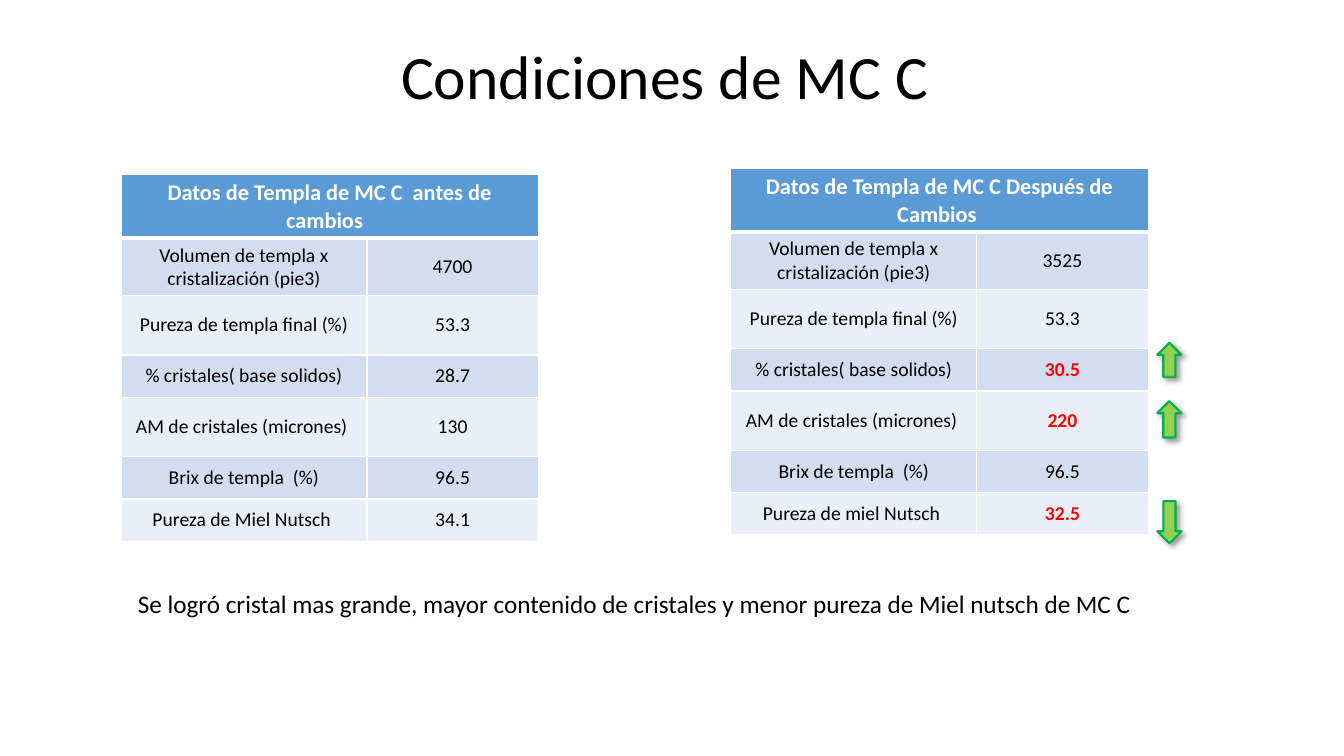
from lxml.etree import SubElement
from pptx import Presentation
from pptx.dml.color import RGBColor
from pptx.enum.shapes import MSO_SHAPE as SHAPE
from pptx.enum.text import MSO_ANCHOR as ANCHOR, PP_ALIGN as ALIGN
from pptx.oxml import parse_xml
from pptx.oxml.ns import nsdecls, qn
from pptx.util import Pt

WHITE = RGBColor(0xFF, 0xFF, 0xFF)
BLACK = RGBColor(0x00, 0x00, 0x00)
RED = RGBColor(0xFF, 0x00, 0x00)
HEADER_BLUE = RGBColor(0x5B, 0x9B, 0xD5)
BAND_DARK = RGBColor(0xD2, 0xDE, 0xEF)
BAND_LIGHT = RGBColor(0xEA, 0xEF, 0xF7)
ARROW_FILL = RGBColor(0x92, 0xD0, 0x50)
ARROW_LINE = RGBColor(0x00, 0xB0, 0x50)

COL_WIDTHS = (175.7, 122.4)
ROW_HEIGHTS = (30.2, 30.2, 42.5, 30.2, 42.5, 30.2, 30.2)
UP, DOWN = 270, 90

BEFORE = [
    ("Volumen de templa x cristalización (pie3)", "4700"),
    ("Pureza de templa final (%)", "53.3"),
    ("% cristales( base solidos)", "28.7"),
    ("AM de cristales (micrones) ", "130"),
    ("Brix de templa  (%)", "96.5"),
    ("Pureza de Miel Nutsch ", "34.1"),
]
AFTER = [
    ("Volumen de templa x cristalización (pie3)", "3525"),
    ("Pureza de templa final (%)", "53.3"),
    ("% cristales( base solidos)", "30.5"),
    ("AM de cristales (micrones) ", "220"),
    ("Brix de templa  (%)", "96.5"),
    ("Pureza de miel Nutsch ", "32.5"),
]
CHANGED = {"30.5", "220", "32.5"}


def write(tf, text, size, color=BLACK, bold=False, align=ALIGN.LEFT):
    p = tf.paragraphs[0]
    p.alignment = align
    r = p.add_run()
    r.text = text
    for name, value in {"name": "Calibri", "size": Pt(size), "bold": bold}.items():
        setattr(r.font, name, value)
    r.font.color.rgb = color
    return p


def add_text(s, box, text, size, align=ALIGN.LEFT, anchor=ANCHOR.TOP):
    tf = s.shapes.add_textbox(*map(Pt, box)).text_frame
    tf.word_wrap = True
    tf.vertical_anchor = anchor
    return write(tf, text, size, align=align)


def style_cell(cell, fill, top=1, bottom=1):
    # Borders come before the fill in the cell properties
    tc_pr = cell._tc.get_or_add_tcPr()
    for side, width in {"L": 1, "R": 1, "T": top, "B": bottom}.items():
        ln = SubElement(tc_pr, qn(f"a:ln{side}"), w=str(Pt(width)))
        solid = SubElement(ln, qn("a:solidFill"))
        SubElement(solid, qn("a:srgbClr"), val=str(WHITE))
    cell.fill.solid()
    cell.fill.fore_color.rgb = fill


def add_data_table(s, left, top, title, data):
    frame = s.shapes.add_table(len(ROW_HEIGHTS), len(COL_WIDTHS), Pt(left), Pt(top),
                               Pt(sum(COL_WIDTHS)), Pt(sum(ROW_HEIGHTS)))
    table = frame.table
    table.horz_banding = False
    for column, width in zip(table.columns, COL_WIDTHS):
        column.width = Pt(width)
    for row, height in zip(table.rows, ROW_HEIGHTS):
        row.height = Pt(height)

    # Header across both columns
    for cell in table.rows[0].cells:
        style_cell(cell, HEADER_BLUE, bottom=3)
    header = table.cell(0, 0)
    header.merge(table.cell(0, 1))
    write(header.text_frame, title, 16, WHITE, True, ALIGN.CENTER)

    # Banded body, with changed values in red
    for i, values in enumerate(data, 1):
        for j, text in enumerate(values):
            cell = table.cell(i, j)
            style_cell(cell, BAND_DARK if i % 2 else BAND_LIGHT, top=3 if i == 1 else 1)
            cell.vertical_anchor = ANCHOR.MIDDLE
            changed = text in CHANGED
            write(cell.text_frame, text, 14, RED if changed else BLACK, changed, ALIGN.CENTER)


def add_trend_arrow(s, center_x, center_y, length, rotation):
    width = 17.3
    sp = s.shapes.add_shape(SHAPE.RIGHT_ARROW, Pt(center_x - length / 2),
                            Pt(center_y - width / 2), Pt(length), Pt(width))
    sp.rotation = rotation
    sp.fill.solid()
    sp.fill.fore_color.rgb = ARROW_FILL
    sp.line.color.rgb = ARROW_LINE
    sp.line.width = Pt(1.5)
    sp._element.spPr.append(parse_xml(
        f'<a:effectLst {nsdecls("a")}><a:outerShdw blurRad="{Pt(4)}" dist="{Pt(3)}" '
        f'dir="{45 * 60000}" algn="tl" rotWithShape="0"><a:srgbClr val="{BLACK}">'
        '<a:alpha val="40000"/></a:srgbClr></a:outerShdw></a:effectLst>'))


def add_after_panel(s, left, top):
    add_data_table(s, left, top, "Datos de Templa de MC C Después de Cambios ", AFTER)
    arrow_x = left + sum(COL_WIDTHS) + 15.2
    for offset, length, rotation in ((136.8, 24.5, UP), (179.3, 26, UP), (252.8, 30.2, DOWN)):
        add_trend_arrow(s, arrow_x, top + offset, length, rotation)


def main():
    prs = Presentation()
    prs.slide_width, prs.slide_height = Pt(960), Pt(540)
    s = prs.slides.add_slide(prs.slide_layouts[6])

    # Title
    p = add_text(s, (66, 28.8, 828, 56.2), "Condiciones de MC C ", 44,
                 ALIGN.CENTER, ANCHOR.MIDDLE)
    p.line_spacing = 0.9

    # Tables before and after the changes
    add_data_table(s, 86.4, 124.6, "Datos de Templa de MC C  antes de cambios  ", BEFORE)
    add_after_panel(s, 522, 120.2)

    # Conclusion
    add_text(s, (91.4, 416.9, 776.9, 28.8),
             "Se logró cristal mas grande, mayor contenido de cristales "
             "y menor pureza de Miel nutsch de MC C", 18)

    prs.save("out.pptx")


if __name__ == "__main__":
    main()
